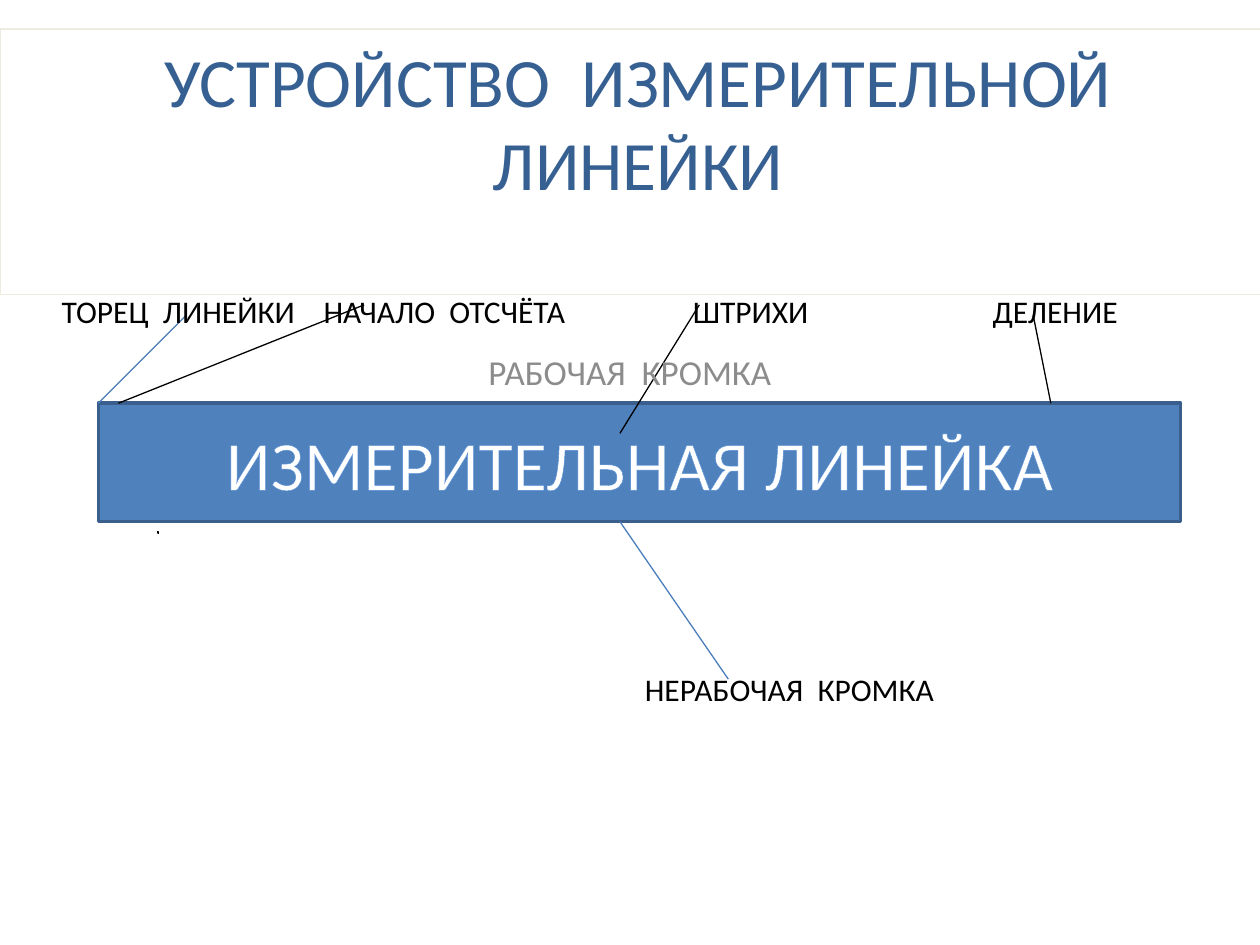
from lxml.etree import SubElement
from pptx import Presentation
from pptx.dml.color import RGBColor
from pptx.enum.shapes import MSO_CONNECTOR, MSO_SHAPE
from pptx.enum.text import MSO_ANCHOR, PP_ALIGN
from pptx.oxml import parse_xml
from pptx.oxml.ns import nsdecls, qn
from pptx.util import Inches, Pt

COLORS = {
    "title": "376092",
    "title_border": "EEECE1",
    "muted": "8C8C8C",
    "ruler": "4F81BD",
    "ruler_border": "3A5F8C",
    "ruler_text": "FFFFFF",
    "text_outline": "558ED5",
    "blue_line": "4B7EBC",
    "black": "000000",
}


def rgb(name):
    return RGBColor.from_string(COLORS[name])


def write_text(shape, text, size=18, color="black", align=PP_ALIGN.LEFT,
               anchor=MSO_ANCHOR.TOP, outline=None):
    frame = shape.text_frame
    frame.word_wrap = True
    frame.vertical_anchor = anchor
    paragraph = frame.paragraphs[0]
    paragraph.alignment = align
    run = paragraph.add_run()
    run.text = text
    run.font.name = "Calibri"
    run.font.size = Pt(size)
    run.font.color.rgb = rgb(color)
    if outline:
        run._r.get_or_add_rPr().insert(0, parse_xml(
            f'<a:ln {nsdecls("a")} w="9525"><a:solidFill>'
            f'<a:srgbClr val="{COLORS[outline]}"/></a:solidFill></a:ln>'))


def add_box(slide, box, border, border_width, fill=None):
    shape = slide.shapes.add_shape(MSO_SHAPE.RECTANGLE, *map(Inches, box))
    shape.shadow.inherit = False
    if fill:
        shape.fill.solid()
        shape.fill.fore_color.rgb = rgb(fill)
    else:
        shape.fill.background()
    shape.line.color.rgb = rgb(border)
    shape.line.width = Pt(border_width)
    return shape


def add_label(slide, box, text, **text_format):
    label = slide.shapes.add_textbox(*map(Inches, box))
    write_text(label, text, **text_format)


def add_line(slide, start, end, color="black", kind=MSO_CONNECTOR.STRAIGHT):
    line = slide.shapes.add_connector(kind, *map(Inches, start + end))
    line.line.color.rgb = rgb(color)
    line.line.width = Pt(0.75)
    SubElement(line._element.spPr, qn("a:effectLst"))


def add_title(slide, box):
    title = add_box(slide, box, "title_border", 0.75)
    frame = title.text_frame
    frame.margin_top = Inches(0.07)
    frame.margin_left = Inches(0.5)
    frame.margin_right = Inches(0.6)
    write_text(title, "УСТРОЙСТВО  ИЗМЕРИТЕЛЬНОЙ ЛИНЕЙКИ", size=39.6,
               color="title", align=PP_ALIGN.CENTER)


def add_ruler(slide, box):
    left, top, width, height = box
    ruler = add_box(slide, box, "ruler_border", 2, fill="ruler")
    write_text(ruler, "ИЗМЕРИТЕЛЬНАЯ ЛИНЕЙКА", size=40, color="ruler_text",
               align=PP_ALIGN.CENTER, anchor=MSO_ANCHOR.MIDDLE,
               outline="text_outline")
    bottom = top + height
    add_line(slide, (left + 0.48, bottom + 0.09), (left + 0.47, bottom + 0.08),
             kind=MSO_CONNECTOR.ELBOW)
    add_line(slide, (left, top), (1.48, 2.5), "blue_line")
    add_line(slide, (4.92, top + 0.24), (5.55, 2.42))
    add_line(slide, (4.92, bottom), (5.78, 5.39), "blue_line")
    add_line(slide, (2.89, 2.42), (left + 0.16, top))
    add_line(slide, (8.2, 2.5), (8.34, top))


def add_labels(slide, box):
    left, top, width, height = box
    labels = [
        (0.39, 2.1, "ТОРЕЦ  ЛИНЕЙКИ"),
        (2.47, 2.2, "НАЧАЛО  ОТСЧЁТА"),
        (5.4, 1.3, "ШТРИХИ"),
        (7.78, 1.4, "ДЕЛЕНИЕ"),
    ]
    for offset, label_width, text in labels:
        add_label(slide, (left + offset, top, label_width, 0.4), text)
    add_label(slide, (left, top + 0.46, width, 0.43), "РАБОЧАЯ  КРОМКА",
              size=20, color="muted", align=PP_ALIGN.CENTER)
    add_label(slide, (left + 5.02, top + height - 0.4, 2.7, 0.4),
              "НЕРАБОЧАЯ  КРОМКА")


def main():
    presentation = Presentation()
    presentation.slide_width = Inches(10)
    presentation.slide_height = Inches(7.5)
    slide = presentation.slides.add_slide(presentation.slide_layouts[6])
    add_title(slide, (0, 0.23, 10.23, 2.11))
    add_ruler(slide, (0.78, 3.2, 8.59, 0.94))
    add_labels(slide, (0, 2.27, 10, 3.4))
    presentation.save("out.pptx")


if __name__ == "__main__":
    main()
